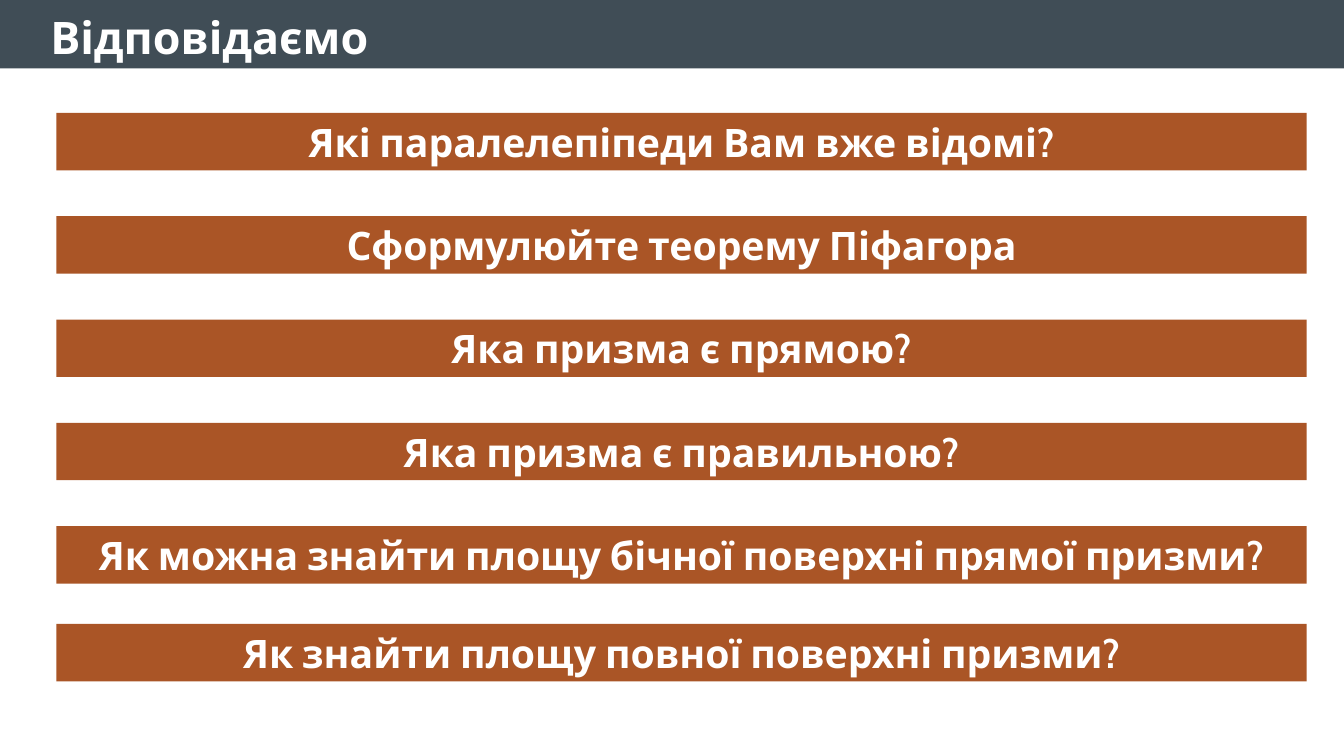
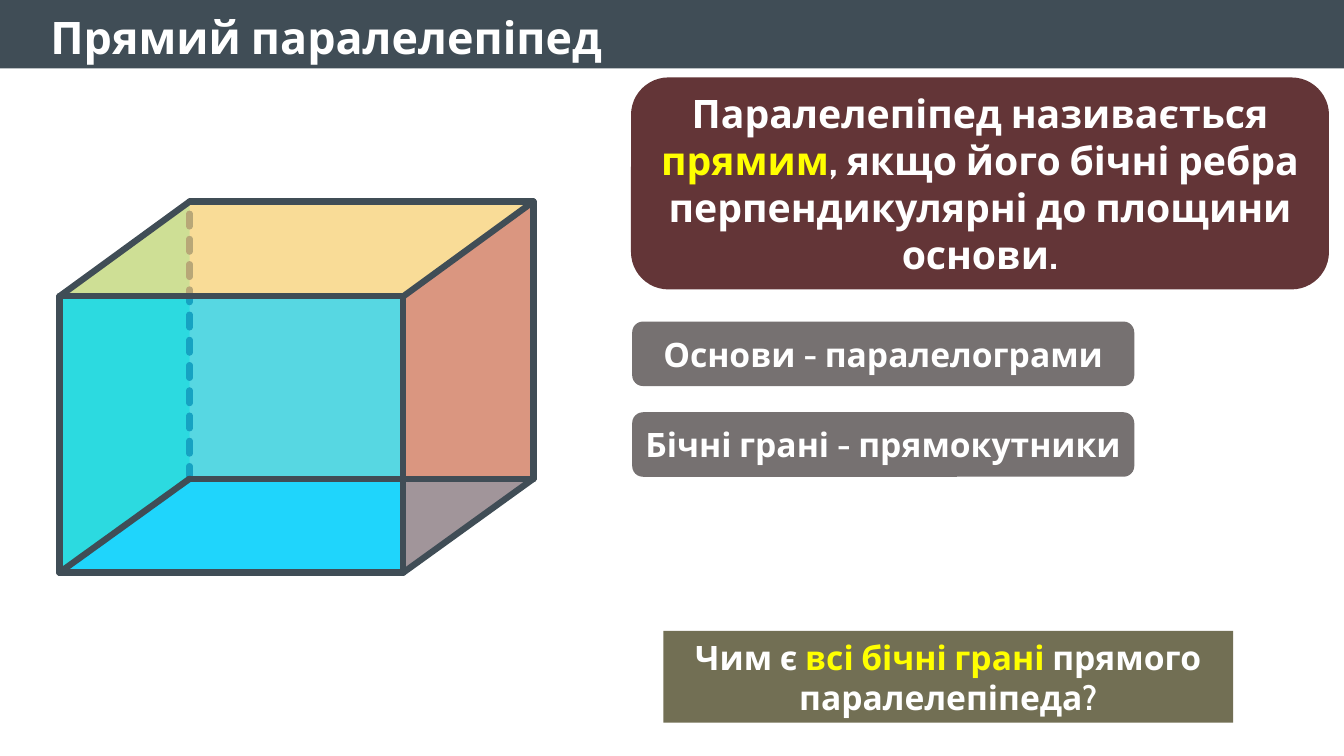
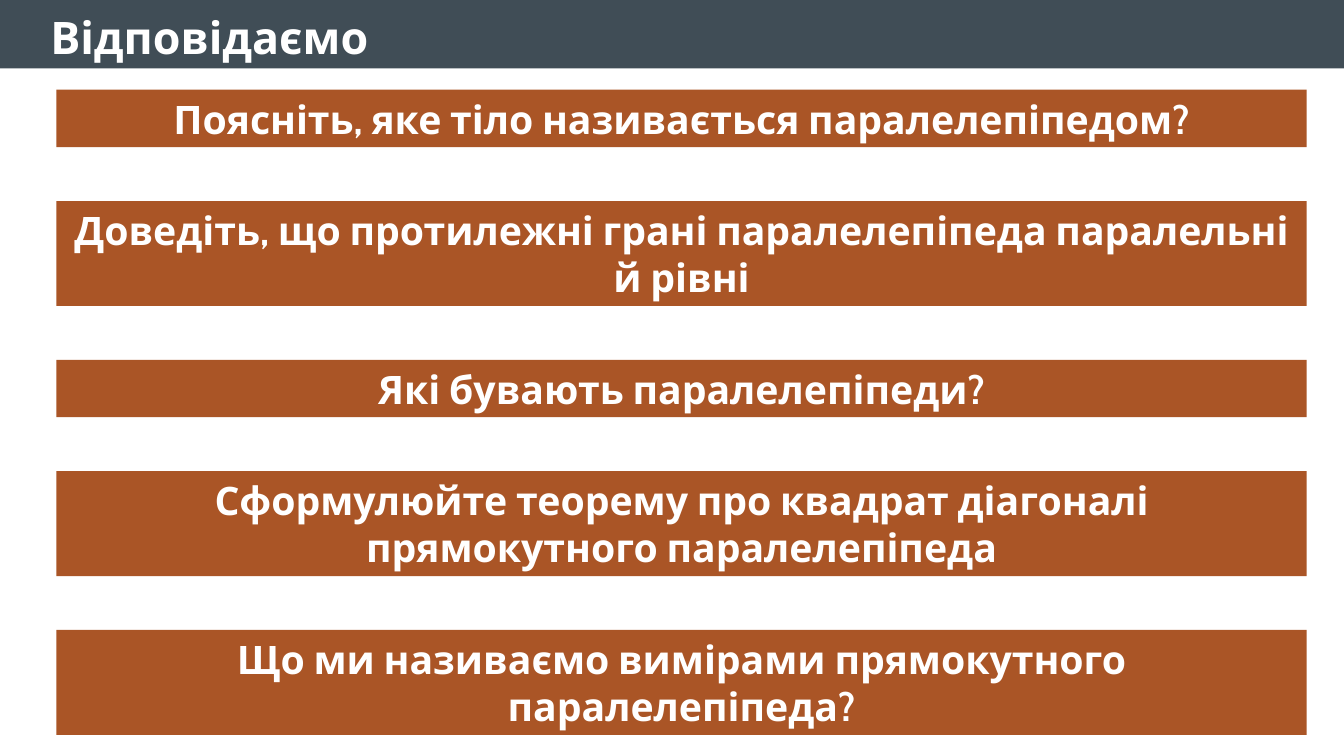
from lxml import etree
from pptx import Presentation
from pptx.dml.color import RGBColor
from pptx.enum.dml import MSO_LINE
from pptx.enum.shapes import MSO_CONNECTOR, MSO_SHAPE
from pptx.enum.text import MSO_ANCHOR, MSO_AUTO_SIZE, PP_ALIGN
from pptx.oxml.ns import qn
from pptx.util import Inches, Pt

RECT, ROUNDED = MSO_SHAPE.RECTANGLE, MSO_SHAPE.ROUNDED_RECTANGLE
STRAIGHT, DASH = MSO_CONNECTOR.STRAIGHT, MSO_LINE.SQUARE_DOT
LEFT, CENTER, MIDDLE = PP_ALIGN.LEFT, PP_ALIGN.CENTER, MSO_ANCHOR.MIDDLE
GROW = MSO_AUTO_SIZE.SHAPE_TO_FIT_TEXT

WIDTH, HEIGHT = 13.33, 7.5
FONT = "Cabin"
SLATE, RUST, MAROON, GRAY, OLIVE = "404D56", "AA5526", "633537", "767171", "726F54"
WHITE, YELLOW = "FFFFFF", "FFFF00"
CYAN, SAND, ROSE, GREEN = "00D0FC", "F9D889", "C96D66", "3BE580"
EDGE_WIDTH, FACE_OPACITY = 4.5, 65
BAR_LEFT, BAR_WIDTH = 0.56, 12.4
BAR_HEIGHTS = {1: 0.57, 2: 1.04}

FRONT_LEFT, FRONT_RIGHT, FRONT_TOP, FRONT_BOTTOM = 0.59, 4, 2.94, 5.68
BACK_LEFT, BACK_RIGHT, BACK_TOP, BACK_BOTTOM = 1.88, 5.29, 2, 4.75
TOP_FACE = [(BACK_LEFT, BACK_TOP), (BACK_RIGHT, BACK_TOP),
            (FRONT_RIGHT, FRONT_TOP), (FRONT_LEFT, FRONT_TOP)]
BASE_FACE = [(BACK_LEFT, BACK_BOTTOM), (BACK_RIGHT, BACK_BOTTOM),
             (FRONT_RIGHT, FRONT_BOTTOM), (FRONT_LEFT, FRONT_BOTTOM)]


def color(hex_code):
    """Turn a hex string into a colour."""
    return RGBColor.from_string(hex_code)


def paint(shape, fill, opacity=100):
    """Give a shape a flat fill without outline or shadow."""
    shape.shadow.inherit = False
    shape.fill.solid()
    shape.fill.fore_color.rgb = color(fill)
    shape.line.fill.background()
    if opacity < 100:
        tint = shape.element.spPr.find(qn("a:solidFill"))[0]
        etree.SubElement(tint, qn("a:alpha"), val=str(opacity * 1000))


def write(shape, text, size, align=CENTER, grow=False):
    """Write bold text, with the parts between asterisks highlighted."""
    frame = shape.text_frame
    frame.word_wrap = True
    frame.vertical_anchor = MIDDLE
    if grow:
        frame.auto_size = GROW
    paragraph = frame.paragraphs[0]
    paragraph.alignment = align
    for index, part in enumerate(text.split("*")):
        run = paragraph.add_run()
        run.text = part
        run.font.name, run.font.size, run.font.bold = FONT, Pt(size), True
        run.font.color.rgb = color(YELLOW if index % 2 else WHITE)


def panel(slide, box, fill, kind=RECT, opacity=100):
    """Add a filled preset shape."""
    shape = slide.shapes.add_shape(kind, *map(Inches, box))
    paint(shape, fill, opacity)
    return shape


def face(slide, corners, fill):
    """Add a translucent slanted face."""
    points = [(Inches(x), Inches(y)) for x, y in corners]
    outline = slide.shapes.build_freeform(*points[0])
    outline.add_line_segments(points[1:], close=True)
    paint(outline.convert_to_shape(), fill, FACE_OPACITY)


def edge(slide, start, end, hidden=False):
    """Add an edge of the solid, dashed when hidden."""
    line = slide.shapes.add_connector(STRAIGHT, *map(Inches, (*start, *end)))
    line.line.color.rgb = color(SLATE)
    line.line.width = Pt(EDGE_WIDTH)
    if hidden:
        line.line.dash_style = DASH
    properties = line.element.spPr
    properties.find(qn("a:ln")).set("cap", "rnd")
    etree.SubElement(properties, qn("a:effectLst"))


def titled_slide(deck, title):
    """Add a blank slide with the title band."""
    slide = deck.slides.add_slide(deck.slide_layouts[6])
    panel(slide, (0, 0, WIDTH, 0.68), SLATE)
    heading = slide.shapes.add_textbox(*map(Inches, (0.4, 0.04, 12.38, 0.64)))
    write(heading, title, 32, LEFT, grow=True)
    return slide


def question_bar(slide, question, top, height):
    """Add one full-width question."""
    bar = panel(slide, (BAR_LEFT, top, BAR_WIDTH, height), RUST)
    write(bar, question, 28, grow=True)


def question_stack(slide, questions, top, bottom):
    """Spread (question, line count) bars with equal gaps."""
    heights = [BAR_HEIGHTS[lines] for _, lines in questions]
    gap = (bottom - top - sum(heights)) / (len(heights) - 1)
    for (question, _), height in zip(questions, heights):
        question_bar(slide, question, top, height)
        top += height + gap


def parallelepiped(slide):
    """Draw the solid from its back faces to its front edges."""
    face_width, face_height = FRONT_RIGHT - FRONT_LEFT, FRONT_BOTTOM - FRONT_TOP
    hidden_corner = BASE_FACE[0]
    edge(slide, hidden_corner, BASE_FACE[3], hidden=True)
    face(slide, BASE_FACE, CYAN)
    panel(slide, (BACK_LEFT, BACK_TOP, face_width, face_height), SAND, opacity=FACE_OPACITY)
    edge(slide, BASE_FACE[1], hidden_corner, hidden=True)
    for (back, front), fill in (((1, 2), ROSE), ((0, 3), GREEN)):
        face(slide, [TOP_FACE[front], TOP_FACE[back], BASE_FACE[back], BASE_FACE[front]], fill)
    edge(slide, hidden_corner, TOP_FACE[0], hidden=True)
    panel(slide, (FRONT_LEFT, FRONT_TOP, face_width, face_height), CYAN, opacity=FACE_OPACITY)
    face(slide, TOP_FACE, SAND)
    for corners in (TOP_FACE, BASE_FACE):
        for start, end in zip(corners, corners[1:] + corners[:1]):
            edge(slide, start, end)
    for base, top in zip(BASE_FACE[1:], TOP_FACE[1:]):
        edge(slide, base, top)


def review_slide(deck):
    """Build the opening questions."""
    slide = titled_slide(deck, "Відповідаємо")
    question_stack(slide, [
        ("Які паралелепіпеди Вам вже відомі?", 1),
        ("Сформулюйте теорему Піфагора", 1),
        ("Яка призма є прямою?", 1),
        ("Яка призма є правильною?", 1),
        ("Як можна знайти площу бічної поверхні прямої призми?", 1),
    ], 1.12, 5.79)
    question_bar(slide, "Як знайти площу повної поверхні призми?", 6.19, BAR_HEIGHTS[1])


def definition_slide(deck):
    """Build the definition of the right parallelepiped."""
    slide = titled_slide(deck, "Прямий паралелепіпед")
    parallelepiped(slide)
    definition = panel(slide, (6.29, 0.8, 6.86, 2.04), MAROON, ROUNDED)
    definition.line.color.rgb = color(MAROON)
    definition.line.width = Pt(EDGE_WIDTH)
    write(definition, "Паралелепіпед називається *прямим*, якщо його бічні ребра "
                      "перпендикулярні до площини основи.", 28)
    properties = ("Основи - паралелограми", "Бічні грані - прямокутники")
    for row, text in enumerate(properties):
        write(panel(slide, (6.27, 3.19 + 0.9 * row, 4.98, 0.64), GRAY, ROUNDED), text, 24)
    question = panel(slide, (6.58, 6.26, 5.65, 0.91), OLIVE)
    write(question, "Чим є *всі бічні грані* прямого паралелепіпеда?", 24, grow=True)


def summary_slide(deck):
    """Build the closing questions."""
    slide = titled_slide(deck, "Відповідаємо")
    question_stack(slide, [
        ("Поясніть, яке тіло називається паралелепіпедом?", 1),
        ("Доведіть, що протилежні грані паралелепіпеда паралельні й рівні", 2),
        ("Які бувають паралелепіпеди?", 1),
        ("Сформулюйте теорему про квадрат діагоналі прямокутного паралелепіпеда", 2),
        ("Що ми називаємо вимірами прямокутного паралелепіпеда?", 2),
    ], 0.89, 7.29)


def main():
    """Build and save the deck."""
    deck = Presentation()
    deck.slide_width, deck.slide_height = Inches(WIDTH), Inches(HEIGHT)
    review_slide(deck)
    definition_slide(deck)
    summary_slide(deck)
    deck.save("out.pptx")


if __name__ == "__main__":
    main()
